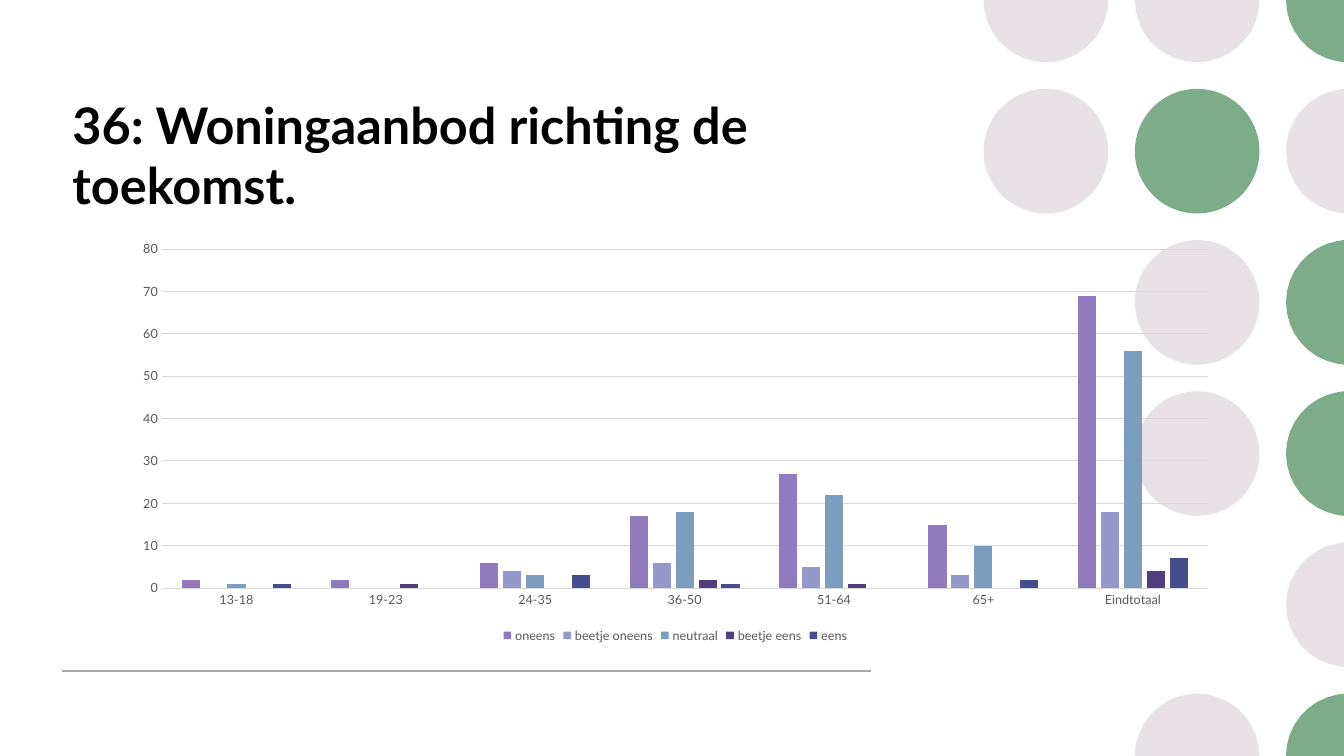
from math import cos, radians, sin

from pptx import Presentation
from pptx.chart.data import CategoryChartData
from pptx.dml.color import RGBColor
from pptx.enum.chart import XL_CHART_TYPE as ChartType
from pptx.enum.chart import XL_LEGEND_POSITION as LegendPosition
from pptx.enum.chart import XL_TICK_MARK as TickMark
from pptx.enum.shapes import MSO_CONNECTOR as Connector
from pptx.enum.shapes import MSO_SHAPE as Preset
from pptx.enum.text import MSO_ANCHOR as Anchor
from pptx.enum.text import MSO_AUTO_SIZE as AutoSize
from pptx.enum.text import PP_ALIGN as Align
from pptx.oxml.ns import qn
from pptx.util import Cm, Pt

BLACK = RGBColor(0x00, 0x00, 0x00)
MAUVE = RGBColor(0xE8, 0xE2, 0xE7)
GREEN = RGBColor(0x7D, 0xAD, 0x88)
RULE_GREY = RGBColor(0xA6, 0xA6, 0xA6)
GRID_GREY = RGBColor(0xD9, 0xD9, 0xD9)
LABEL_GREY = RGBColor(0x59, 0x59, 0x59)

WIDTH, HEIGHT = 33.87, 19.05

# Dots: one letter per column, M mauve, G green, "." empty
DOT_ROWS = ["MMG", "MGM", ".MG", ".MG", "..M", ".MG"]
DOT_COLOURS = {"M": MAUVE, "G": GREEN}
DOT_RADIUS, DOT_LEFT, DOT_PITCH = 1.57, 26.36, 3.81
EDGE_SLACK = 0.15

AGE_GROUPS = ["13-18", "19-23", "24-35", "36-50", "51-64", "65+", "Eindtotaal"]
ANSWERS = [
    ("oneens", RGBColor(0x8F, 0x7B, 0xBE), [2, 2, 6, 17, 27, 15, 69]),
    ("beetje oneens", RGBColor(0x93, 0x99, 0xCA), [None, None, 4, 6, 5, 3, 18]),
    ("neutraal", RGBColor(0x7B, 0x9E, 0xBE), [1, None, 3, 18, 22, 10, 56]),
    ("beetje eens", RGBColor(0x51, 0x3E, 0x7E), [None, 1, None, 2, 1, None, 4]),
    ("eens", RGBColor(0x45, 0x4D, 0x8C), [1, None, 3, 1, None, 2, 7]),
]


def apply(target, **values):
    for name, value in values.items():
        setattr(target, name, value)


def clamp(x, y):
    return min(max(x, 0), WIDTH), min(max(y, 0), HEIGHT)


def visible_arc(x, y, radius):
    """The middle of a dot on the slide edge, then its arc inside the slide."""
    points = [clamp(x, y)]
    for angle in range(0, 361, 10):
        ideal = x + radius * cos(radians(angle)), y + radius * sin(radians(angle))
        inside = clamp(*ideal)
        if max(abs(a - b) for a, b in zip(ideal, inside)) < EDGE_SLACK:
            points.append(inside)
    return [(Cm(a), Cm(b)) for a, b in points]


class SlideBuilder:
    font = "Lato"

    def __init__(self, deck):
        self.page = deck.slides.add_slide(deck.slide_layouts[5])
        self.shapes = self.page.shapes

    def style_font(self, font, size, colour, bold=False):
        apply(font, name=self.font, size=Pt(size), bold=bold)
        font.color.rgb = colour

    def style_line(self, line, colour, width):
        line.color.rgb = colour
        line.width = Pt(width)

    def title(self, text, left, top, width, height):
        box = self.shapes.title
        apply(box, left=Cm(left), top=Cm(top), width=Cm(width), height=Cm(height))
        apply(box.text_frame, word_wrap=True, auto_size=AutoSize.NONE,
              vertical_anchor=Anchor.MIDDLE)
        para = box.text_frame.paragraphs[0]
        para.alignment = Align.LEFT
        span = para.add_run()
        span.text = text
        self.style_font(span.font, 36, BLACK, bold=True)

    def dot(self, x, y, radius, colour):
        """A full circle, or its outline cut off at the slide edges."""
        if radius <= x <= WIDTH - radius and radius <= y <= HEIGHT - radius:
            shape = self.shapes.add_shape(Preset.OVAL, Cm(x - radius), Cm(y - radius),
                                          Cm(2 * radius), Cm(2 * radius))
        else:
            start, *arc = visible_arc(x, y, radius)
            outline = self.shapes.build_freeform(*start)
            outline.add_line_segments(arc, close=True)
            shape = outline.convert_to_shape()
        shape.shadow.inherit = False
        shape.fill.solid()
        shape.fill.fore_color.rgb = colour
        shape.line.fill.background()

    def rule(self, left, right, y):
        line = self.shapes.add_connector(Connector.STRAIGHT, Cm(left), Cm(y), Cm(right), Cm(y))
        self.style_line(line.line, RULE_GREY, 1)
        properties = line._element.spPr
        properties.append(properties.makeelement(qn("a:effectLst"), {}))

    def column_chart(self, categories, answers, left, top, width, height):
        data = CategoryChartData()
        data.categories = categories
        for name, _, values in answers:
            data.add_series(name, values)
        chart = self.shapes.add_chart(ChartType.COLUMN_CLUSTERED, Cm(left), Cm(top),
                                      Cm(width), Cm(height), data).chart
        apply(chart, has_title=False, has_legend=True)
        self.style_font(chart.font, 10, BLACK)

        # Columns
        plot = chart.plots[0]
        apply(plot, gap_width=219, overlap=-27, vary_by_categories=False)
        for series, (_, colour, _) in zip(plot.series, answers):
            series.invert_if_negative = False
            series.format.fill.solid()
            series.format.fill.fore_color.rgb = colour

        # Axes
        for axis in (chart.category_axis, chart.value_axis):
            apply(axis, major_tick_mark=TickMark.NONE, minor_tick_mark=TickMark.NONE)
            self.style_font(axis.tick_labels.font, 9, LABEL_GREY)
        self.style_line(chart.category_axis.format.line, GRID_GREY, 0.75)
        scale = chart.value_axis
        apply(scale, minimum_scale=0, maximum_scale=80, major_unit=10,
              has_major_gridlines=True)
        scale.format.line.fill.background()
        self.style_line(scale.major_gridlines.format.line, GRID_GREY, 0.75)

        # Legend
        apply(chart.legend, position=LegendPosition.BOTTOM, include_in_layout=False)
        self.style_font(chart.legend.font, 9, LABEL_GREY)


def main():
    deck = Presentation()
    apply(deck, slide_width=Cm(WIDTH), slide_height=Cm(HEIGHT))
    slide = SlideBuilder(deck)

    # Dot pattern on the right
    for row, letters in enumerate(DOT_ROWS):
        for column, letter in enumerate(letters):
            if letter in DOT_COLOURS:
                slide.dot(DOT_LEFT + column * DOT_PITCH, row * DOT_PITCH,
                          DOT_RADIUS, DOT_COLOURS[letter])

    # Heading, rule and chart
    slide.rule(1.57, 21.95, 16.91)
    slide.title("36: Woningaanbod richting de toekomst.", 1.57, 2.13, 20.37, 3.53)
    slide.column_chart(AGE_GROUPS, ANSWERS, 3.05, 5.87, 27.94, 10.44)

    deck.save("out.pptx")


if __name__ == "__main__":
    main()
